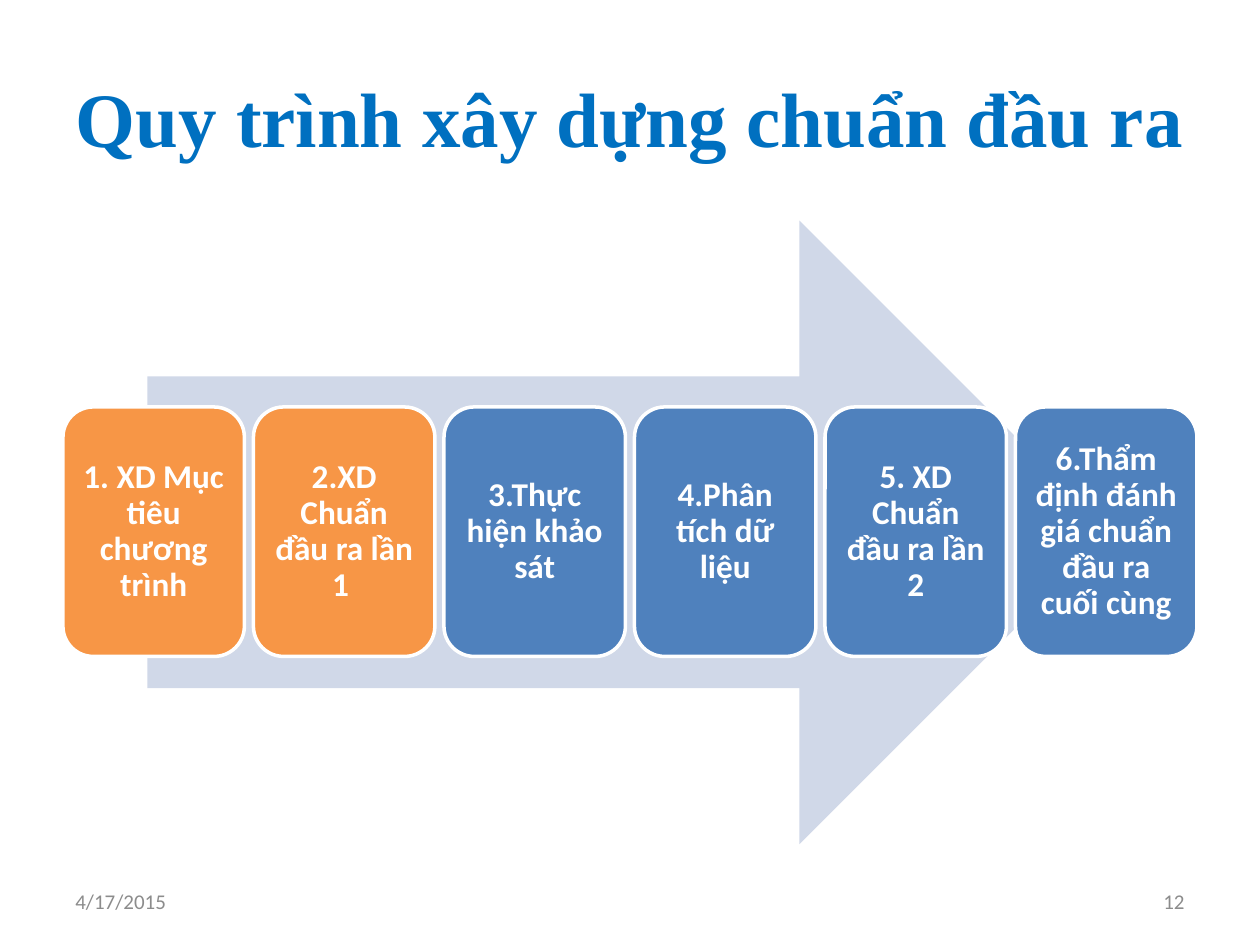
import pptx
import pptx.util
import pptx.dml.color
import pptx.enum.shapes
import pptx.enum.text

Inches = pptx.util.Inches
Pt = pptx.util.Pt
SHAPE = pptx.enum.shapes.MSO_SHAPE
ALIGN = pptx.enum.text.PP_ALIGN

ORANGE, BLUE, WHITE, GREY = "F79646", "4F81BD", "FFFFFF", "8C8C8C"
STEPS = [
    ("1. XD Mục tiêu chương trình", ORANGE),
    ("2.XD Chuẩn đầu ra lần 1 ", ORANGE),
    ("3.Thực hiện khảo sát", BLUE),
    ("4.Phân tích dữ liệu", BLUE),
    ("5. XD Chuẩn đầu ra lần 2", BLUE),
    ("6.Thẩm định đánh giá chuẩn đầu ra cuối cùng", BLUE),
]
STEP_LEFT, STEP_RIGHT, STEP_WIDTH = 0.5, 9.5, 1.44


def color(hex_value):
    return pptx.dml.color.RGBColor.from_string(hex_value)


def write(box, text, size, hex_value, align, font="Calibri", bold=False):
    frame = box.text_frame
    frame.word_wrap = True
    frame.vertical_anchor = pptx.enum.text.MSO_ANCHOR.MIDDLE
    para = frame.paragraphs[0]
    para.text = text
    para.alignment = align
    para.font.name = font
    para.font.size = Pt(size)
    para.font.bold = bold
    para.font.color.rgb = color(hex_value)


def add_text(page, left, top, width, height, *style, **options):
    box = page.shapes.add_textbox(
        Inches(left), Inches(top), Inches(width), Inches(height))
    write(box, *style, **options)


def add_filled(page, kind, left, top, width, height, fill):
    shape = page.shapes.add_shape(
        kind, Inches(left), Inches(top), Inches(width), Inches(height))
    shape.shadow.inherit = False
    shape.fill.solid()
    shape.fill.fore_color.rgb = color(fill)
    shape.line.fill.background()
    return shape


def add_step(page, left, text, fill):
    step = add_filled(
        page, SHAPE.ROUNDED_RECTANGLE, left, 3.23, STEP_WIDTH, 1.98, fill)
    step.line.color.rgb = color(WHITE)
    step.line.width = Pt(2)
    write(step, text, 19, WHITE, ALIGN.CENTER, bold=True)
    frame = step.text_frame
    frame.margin_left = frame.margin_right = Inches(0.08)
    frame.margin_top = frame.margin_bottom = Inches(0.08)
    frame.paragraphs[0].line_spacing = 0.9


def main():
    deck = pptx.Presentation()
    deck.slide_width, deck.slide_height = Inches(10), Inches(7.5)
    page = deck.slides.add_slide(deck.slide_layouts[6])

    add_text(page, 0.5, 0.3, 9, 1.25, "Quy trình xây dựng chuẩn đầu ra", 44,
             "0070C0", ALIGN.CENTER, font="Times New Roman", bold=True)
    add_filled(page, SHAPE.RIGHT_ARROW, 1.17, 1.75, 7.65, 4.95, "D0D8E8")

    pitch = (STEP_RIGHT - STEP_LEFT - STEP_WIDTH) / (len(STEPS) - 1)
    for index, (text, fill) in enumerate(STEPS):
        add_step(page, STEP_LEFT + index * pitch, text, fill)

    add_text(page, 0.5, 6.95, 2.33, 0.4, "4/17/2015", 12, GREY, ALIGN.LEFT)
    add_text(page, 7.17, 6.95, 2.33, 0.4, "12", 12, GREY, ALIGN.RIGHT)
    deck.save("out.pptx")


if __name__ == "__main__":
    main()
